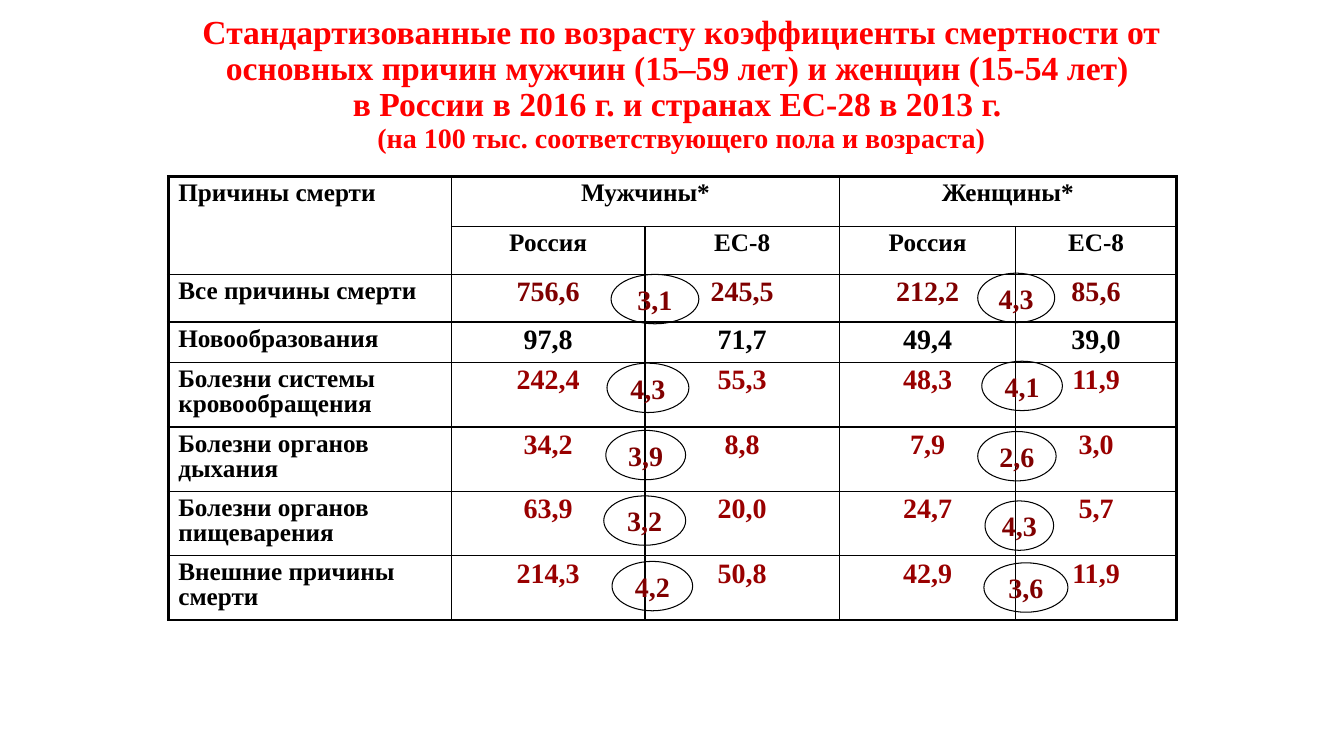
"""Build a slide that compares death rates in Russia and the EU."""
from dataclasses import dataclass

from lxml import etree
from pptx import Presentation
from pptx.dml.color import RGBColor
from pptx.enum.shapes import MSO_SHAPE
from pptx.enum.text import MSO_ANCHOR, MSO_AUTO_SIZE, PP_ALIGN
from pptx.oxml.ns import qn
from pptx.util import Pt

OVAL = MSO_SHAPE.OVAL
MIDDLE = MSO_ANCHOR.MIDDLE
NO_FIT = MSO_AUTO_SIZE.NONE
LEFT, CENTER = PP_ALIGN.LEFT, PP_ALIGN.CENTER

HUES = {"title": "FF0000", "ink": "000000", "wine": "800000", "red": "990000"}
FONT = {"name": "Times New Roman", "bold": True}
SPACING = {"line_spacing": 0.9, "space_before": Pt(7.5)}
THIN, THICK = 1, 2.25
COLS = (202.3, 138.2, 139, 126, 114.5)
ROWS = (36, 34, 34, 29, 46, 46, 46, 46)
MERGES = ((0, 0, 1, 0), (0, 1, 0, 2), (0, 3, 0, 4))
RING_HIGH = 35.3


@dataclass
class Row:
    """One line of the table."""
    cells: tuple[str, ...]
    hue: str = "red"
    size: float = 20


@dataclass
class Ring:
    """One ratio in an oval."""
    left: float
    top: float
    width: float
    text: str


TITLE = (
    ("Стандартизованные по возрасту коэффициенты смертности от основных причин "
     "мужчин (15–59 лет) и женщин (15-54 лет) ", 24),
    ("в России в 2016 г. и странах ЕС-28 в 2013 г. ", 24),
    ("(на 100 тыс. соответствующего пола и возраста)", 20),
)
DATA = (
    Row(("Причины смерти", "Мужчины*", "", "Женщины*", ""), "ink", 18),
    Row(("", "Россия", "ЕС-8", "Россия", "ЕС-8"), "ink", 18),
    Row(("Все причины смерти", "756,6", "245,5", "212,2", "85,6"), "wine"),
    Row(("Новообразования", "97,8", "71,7", "49,4", "39,0"), "ink"),
    Row(("Болезни системы кровообращения", "242,4", "55,3", "48,3", "11,9")),
    Row(("Болезни органов дыхания", "34,2", "8,8", "7,9", "3,0")),
    Row(("Болезни органов пищеварения", "63,9", "20,0", "24,7", "5,7")),
    Row(("Внешние причины смерти", "214,3", "50,8", "42,9", "11,9")),
)
RINGS = (
    Ring(431.3, 354.2, 58.5, "3,2"),
    Ring(432.7, 307.4, 57, "3,9"),
    Ring(433.6, 259.4, 58.5, "4,3"),
    Ring(437.2, 401, 57.6, "4,2"),
    Ring(701.3, 258, 57.6, "4,1"),
    Ring(698.4, 308.2, 56, "2,6"),
    Ring(703.6, 357.8, 49, "4,3"),
    Ring(702.8, 402, 60, "3,6"),
    Ring(436.5, 196, 62.7, "3,1"),
    Ring(698.4, 195.1, 55, "4,3"),
)


def assign(target, values: dict) -> None:
    """Set each named value on the target."""
    for name, value in values.items():
        setattr(target, name, value)


def write(para, text: str, size: float, hue: str) -> None:
    """Add a run of bold text."""
    run = para.add_run()
    run.text = text
    assign(run.font, FONT | {"size": Pt(size)})
    run.font.color.rgb = RGBColor.from_string(HUES[hue])


def border(cell, side: str, width: float) -> None:
    """Draw one edge of a cell."""
    props = cell._tc.get_or_add_tcPr()
    line = etree.SubElement(props, qn(f"a:ln{side}"), w=str(Pt(width)))
    fill = etree.SubElement(line, qn("a:solidFill"))
    etree.SubElement(fill, qn("a:srgbClr"), val=HUES["ink"])


def add_title(slide) -> None:
    """Fill the title and put it in place."""
    title = slide.shapes.title
    assign(title, {"left": Pt(133.9), "top": Pt(9.4),
                   "width": Pt(705.6), "height": Pt(102.2)})
    frame = title.text_frame
    assign(frame, {"auto_size": NO_FIT, "word_wrap": True, "vertical_anchor": MIDDLE})
    para = frame.paragraphs[0]
    assign(para, {"alignment": CENTER, "line_spacing": 0.9, "space_before": Pt(0)})
    for index, (text, size) in enumerate(TITLE):
        if index:
            para.add_line_break()
        write(para, text, size, "title")


def add_rates(slide) -> None:
    """Draw the table of rates."""
    table = slide.shapes.add_table(len(ROWS), len(COLS), Pt(120.2), Pt(126),
                                   Pt(sum(COLS)), Pt(sum(ROWS))).table
    assign(table, {"first_row": False, "horz_banding": False})
    for col, width in zip(table.columns, COLS):
        col.width = Pt(width)
    for line, height in zip(table.rows, ROWS):
        line.height = Pt(height)
    for top, left, low, right in MERGES:
        table.cell(top, left).merge(table.cell(low, right))
    for r, row in enumerate(DATA):
        for c, text in enumerate(row.cells):
            cell = table.cell(r, c)
            outer = {"L": c == 0, "R": c + cell.span_width == len(COLS),
                     "T": r == 0, "B": r == len(ROWS) - 1}
            for side, edge in outer.items():
                border(cell, side, THICK if edge else THIN)
            cell.fill.background()
            if text:
                para = cell.text_frame.paragraphs[0]
                assign(para, SPACING | {"alignment": CENTER if c else LEFT})
                write(para, text, row.size if c else 18, row.hue if c else "ink")


def add_ring(slide, ring: Ring) -> None:
    """Draw one oval with its ratio."""
    shape = slide.shapes.add_shape(OVAL, Pt(ring.left), Pt(ring.top),
                                   Pt(ring.width), Pt(RING_HIGH))
    shape.shadow.inherit = False
    shape.fill.background()
    shape.line.color.rgb = RGBColor.from_string(HUES["ink"])
    shape.line.width = Pt(0.75)
    frame = shape.text_frame
    assign(frame, {"word_wrap": False, "vertical_anchor": MIDDLE})
    para = frame.paragraphs[0]
    para.alignment = CENTER
    write(para, ring.text, 20, "wine")


def main() -> None:
    """Make the deck and save it."""
    deck = Presentation()
    assign(deck, {"slide_width": Pt(960), "slide_height": Pt(540)})
    slide = deck.slides.add_slide(deck.slide_layouts[5])
    add_title(slide)
    add_rates(slide)
    for ring in RINGS:
        add_ring(slide, ring)
    deck.save("out.pptx")


if __name__ == "__main__":
    main()
